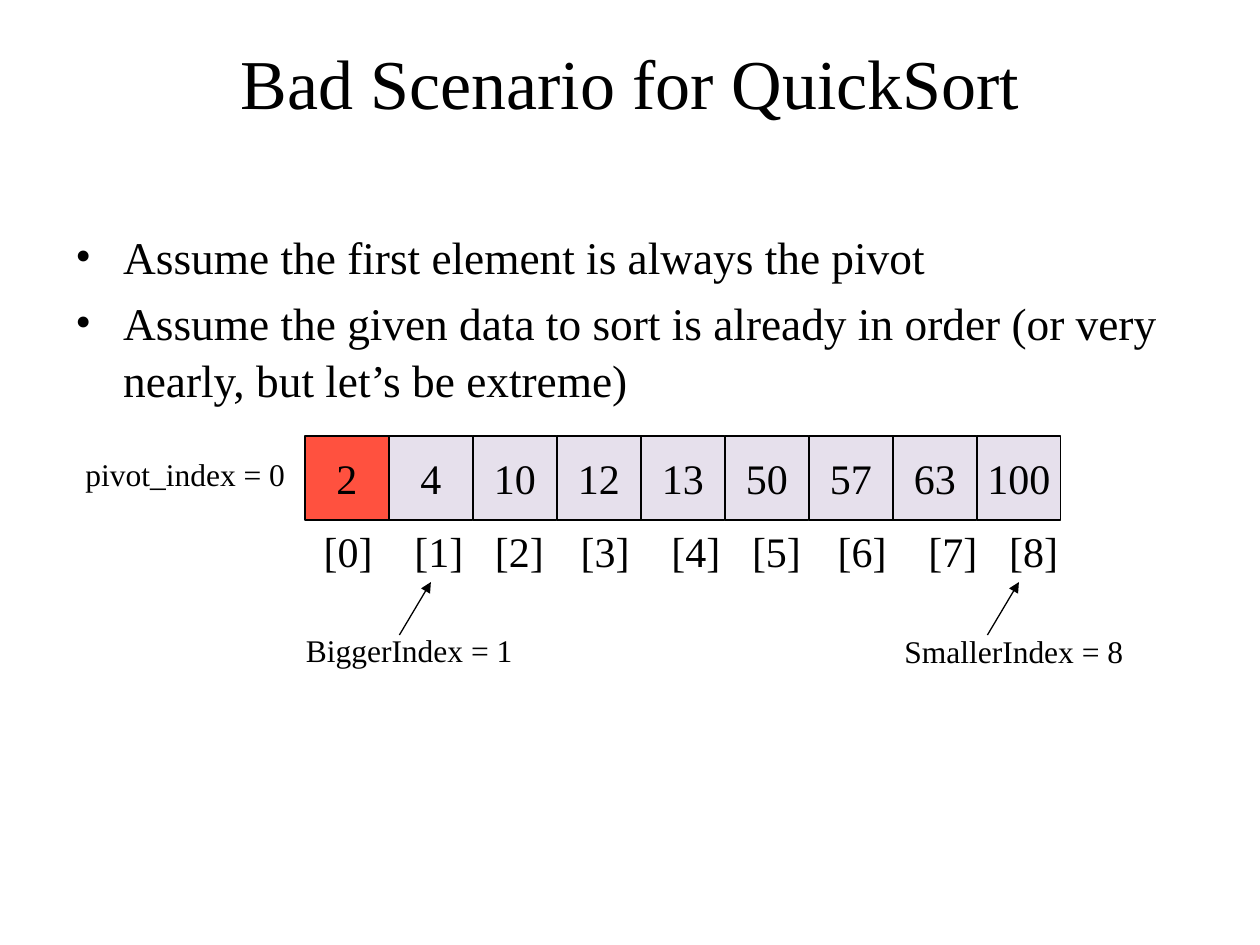
import pptx
import pptx.util
import pptx.dml.color
import pptx.enum.shapes
import pptx.enum.text
import pptx.oxml
import pptx.oxml.ns

FONT = "Times New Roman"
BLACK = "000000"
PIVOT_FILL = "FF513F"
CELL_FILL = "E6E0EC"

TITLE = "Bad Scenario for QuickSort"
BULLETS = [
    "Assume the first element is always the pivot",
    "Assume the given data to sort is already in order (or very nearly, but let’s be extreme)",
]
VALUES = [2, 4, 10, 12, 13, 50, 57, 63, 100]
PIVOT_INDEX = 0
NOTES = [
    ("pivot_index = 0", (0.58, 3.56, 1.79, 0.4)),
    ("BiggerIndex = 1", (2.33, 4.96, 3.17, 0.4)),
    ("SmallerIndex = 8", (7.08, 4.97, 2.33, 0.4)),
]
POINTED_INDEXES = [8, 1]

CELL = 2 / 3
ARRAY_LEFT, ARRAY_TOP = 2.42, 3.46
LABEL_STEPS = [0, 0.72, 1.36]
LABEL_PERIOD = 2.04
ARROW_TOP, ARROW_BOTTOM = 4.62, 5.04

ALIGN = pptx.enum.text.PP_ALIGN
ANCHOR = pptx.enum.text.MSO_ANCHOR


def inches(*lengths):
    return [pptx.util.Inches(length) for length in lengths]


def color(value):
    return pptx.dml.color.RGBColor.from_string(value)


def add_child(parent, tag, **attributes):
    child = pptx.oxml.ns.qn(tag)
    element = parent.makeelement(child, {k: str(v) for k, v in attributes.items()})
    parent.append(element)
    return element


def add_run(paragraph, text, size):
    run = paragraph.add_run()
    run.text = text
    run.font.name = FONT
    run.font.size = pptx.util.Pt(size)
    run.font.color.rgb = color(BLACK)


def add_text(slide, box, lines, size, align=ALIGN.LEFT, anchor=ANCHOR.TOP):
    frame = slide.shapes.add_textbox(*inches(*box)).text_frame
    frame.word_wrap = True
    frame.vertical_anchor = anchor
    for number, line in enumerate(lines):
        paragraph = frame.add_paragraph() if number else frame.paragraphs[0]
        paragraph.alignment = align
        add_run(paragraph, line, size)
    return frame


def add_bullets(slide):
    frame = add_text(slide, (0.5, 1.75, 9, 1.42), BULLETS, 25.9)
    indent = pptx.util.Inches(0.38)
    for paragraph in frame.paragraphs:
        paragraph.space_before = pptx.util.Pt(5)
        paragraph.line_spacing = 1.05
        properties = paragraph._p.get_or_add_pPr()
        properties.set("marL", str(indent))
        properties.set("indent", str(-indent))
        add_child(properties, "a:buFont", typeface=FONT)
        add_child(properties, "a:buChar", char="•")


def add_cell(slide, index, value):
    cell = slide.shapes.add_shape(
        pptx.enum.shapes.MSO_SHAPE.RECTANGLE,
        *inches(ARRAY_LEFT + index * CELL, ARRAY_TOP, CELL, CELL))
    cell.shadow.inherit = False
    cell.fill.solid()
    cell.fill.fore_color.rgb = color(PIVOT_FILL if index == PIVOT_INDEX else CELL_FILL)
    cell.line.color.rgb = color(BLACK)
    cell.line.width = pptx.util.Pt(0.75)
    frame = cell.text_frame
    frame.word_wrap = False
    frame.vertical_anchor = ANCHOR.MIDDLE
    frame.paragraphs[0].alignment = ALIGN.CENTER
    add_run(frame.paragraphs[0], str(value), 24)


def add_index_labels(slide):
    labels = "\t".join(f"[{index}]" for index in range(len(VALUES)))
    frame = add_text(slide, (2.47, 4.12, 5.95, 0.5), [labels], 24)
    frame.margin_right = 0
    stops = add_child(frame.paragraphs[0]._p.get_or_add_pPr(), "a:tabLst")
    for index in range(1, len(VALUES)):
        group, step = divmod(index, len(LABEL_STEPS))
        position = pptx.util.Inches(group * LABEL_PERIOD + LABEL_STEPS[step])
        add_child(stops, "a:tab", pos=position, algn="l")


def add_arrow(slide, index):
    tip = ARRAY_LEFT + (index + 0.5) * CELL
    arrow = slide.shapes.add_connector(
        pptx.enum.shapes.MSO_CONNECTOR.STRAIGHT,
        *inches(tip - 0.25, ARROW_BOTTOM, tip, ARROW_TOP))
    arrow.line.color.rgb = color(BLACK)
    arrow.line.width = pptx.util.Pt(0.75)
    add_child(arrow.line._get_or_add_ln(), "a:tailEnd", type="triangle")
    add_child(arrow._element.spPr, "a:effectLst")


def main():
    presentation = pptx.Presentation()
    presentation.slide_width, presentation.slide_height = inches(10, 7.5)
    slide = presentation.slides.add_slide(presentation.slide_layouts[6])
    add_text(slide, (0.5, 0.3, 9, 0.7), [TITLE], 40, ALIGN.CENTER, ANCHOR.MIDDLE)
    add_bullets(slide)
    for index, value in enumerate(VALUES):
        add_cell(slide, index, value)
    add_index_labels(slide)
    for text, box in NOTES:
        add_text(slide, box, [text], 18)
    for index in POINTED_INDEXES:
        add_arrow(slide, index)
    presentation.save("out.pptx")


if __name__ == "__main__":
    main()
